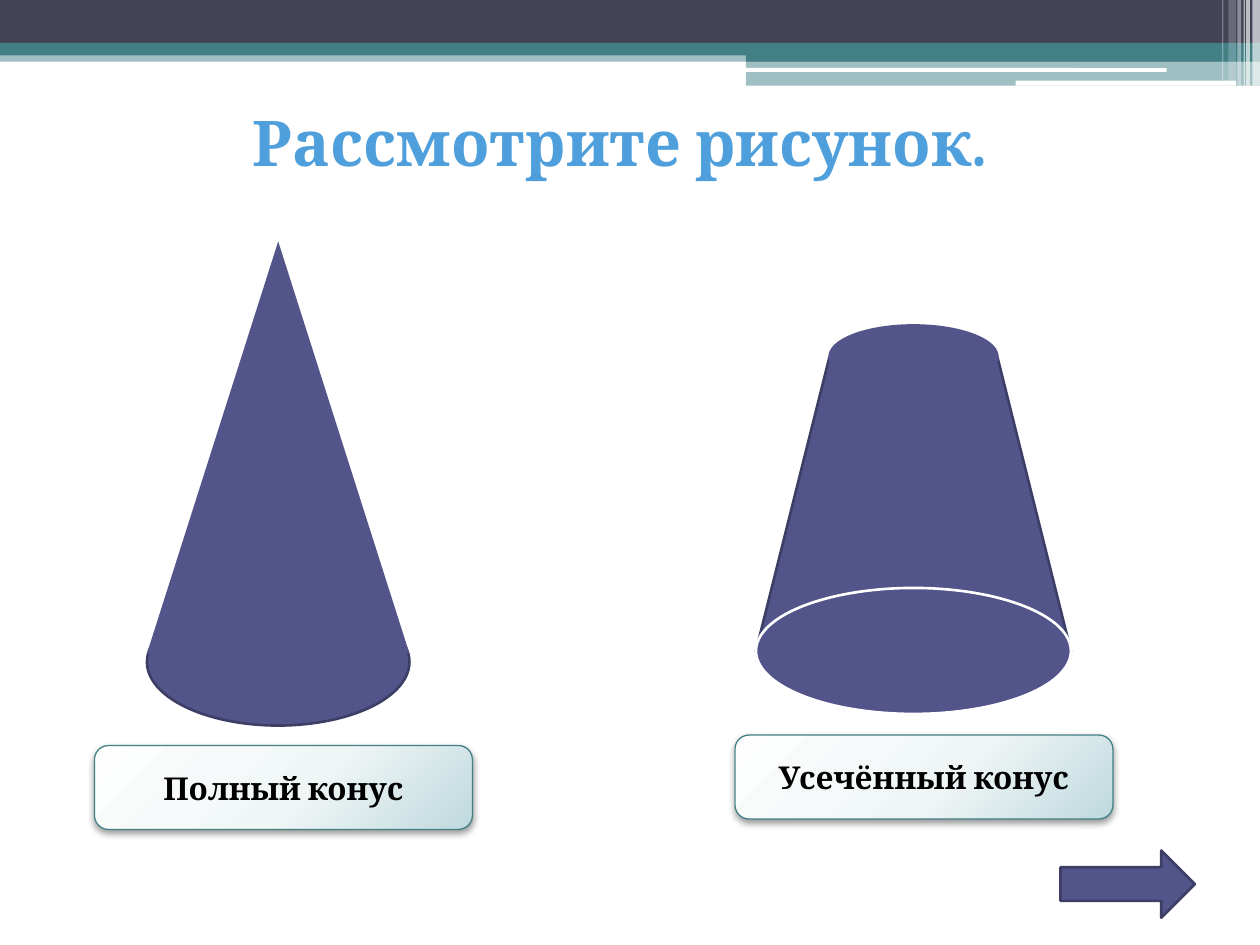
"""Builds a slide that compares a full cone with a truncated cone."""
from lxml import etree
from pptx import Presentation
from pptx import util as u
from pptx.dml.color import RGBColor
from pptx.enum import shapes, text
from pptx.oxml import parse_xml

COLORS = {
    "white": "FFFFFF", "slate": "424456", "teal": "438086", "violet": "53548A",
    "edge": "3D3E66", "title": "4E9FDB", "black": "000000",
}
HUNDREDTH = u.Inches(1) / 100
TWELFTH = u.Inches(1) / 12
DRAWING = "http://schemas.openxmlformats.org/drawingml/2006/main"
KINDS = shapes.MSO_SHAPE

GRADIENT = f"""<a:gradFill xmlns:a="{DRAWING}" rotWithShape="1"><a:gsLst>
<a:gs pos="0"><a:srgbClr val="FEFEFE"/></a:gs>
<a:gs pos="55000"><a:srgbClr val="F0F6F6"/></a:gs>
<a:gs pos="100000"><a:srgbClr val="BFD9DD"/></a:gs></a:gsLst>
<a:path path="circle"><a:fillToRect l="-40000" t="-90000" r="140000" b="190000"/></a:path>
</a:gradFill>"""
SHADOW = f"""<a:effectLst xmlns:a="{DRAWING}">
<a:outerShdw blurRad="{u.Pt(4.1)}" dist="{u.Pt(2)}" dir="5400000" rotWithShape="0">
<a:srgbClr val="000000"><a:alpha val="40000"/></a:srgbClr></a:outerShdw></a:effectLst>"""


def draw(parent, kind, cell, spot, fill, line=None, weight=1.5):
    box = parent.shapes.add_shape(kind, *(round(cell * part) for part in spot))
    box.shadow.inherit = False
    box.fill.solid()
    box.fill.fore_color.rgb = RGBColor.from_string(COLORS[fill])
    if line:
        box.line.color.rgb = RGBColor.from_string(COLORS[line])
        box.line.width = u.Pt(weight)
    else:
        box.line.fill.background()
    return box


def write(box, words, size, color):
    frame = box.text_frame
    for name, value in {"word_wrap": True, "vertical_anchor": text.MSO_ANCHOR.MIDDLE,
                        "auto_size": text.MSO_AUTO_SIZE.NONE}.items():
        setattr(frame, name, value)
    para = frame.paragraphs[0]
    para.alignment = text.PP_ALIGN.CENTER
    span = para.add_run()
    span.text = words
    for name, value in {"name": "Cambria", "size": u.Pt(size), "bold": True}.items():
        setattr(span.font, name, value)
    span.font.color.rgb = RGBColor.from_string(COLORS[color])


deck = Presentation()
deck.slide_width, deck.slide_height = u.Inches(10), u.Inches(7.5)
page = deck.slides.add_slide(deck.slide_layouts[5])

banner = [
    (KINDS.RECTANGLE, (0, 40, 1000, 9), "teal", 50),
    (KINDS.RECTANGLE, (0, 0, 1000, 34), "slate", 100),
    (KINDS.RECTANGLE, (0, 34, 1000, 10), "teal", 100),
    (KINDS.RECTANGLE, (592, 39, 408, 10), "teal", 100),
    (KINDS.RECTANGLE, (592, 48, 408, 20), "teal", 50),
    (KINDS.ROUNDED_RECTANGLE, (591, 54, 335, 3), "white", 100),
    (KINDS.ROUNDED_RECTANGLE, (806, 64, 175, 4), "white", 100),
]
stripes = [(994, 6, 68, 65), (989, 3, 68, 65), (987, 1, 68, 60),
           (982, 3, 68, 40), (975, 6, 64, 20), (970, 1, 64, 30)]
banner += [(KINDS.RECTANGLE, (left, 0, width, height), "white", opacity)
           for left, width, height, opacity in stripes]
for kind, spot, fill, opacity in banner:
    band = draw(page, kind, HUNDREDTH, spot, fill)
    if opacity < 100:
        tint = band.fill._xPr.find(f".//{{{DRAWING}}}srgbClr")
        etree.SubElement(tint, f"{{{DRAWING}}}alpha", val=str(opacity * 1000))

title = page.shapes.title
for name, value in {"left": 0, "top": 6 * TWELFTH,
                    "width": 118 * TWELFTH, "height": 15 * TWELFTH}.items():
    setattr(title, name, round(value))
write(title, "Рассмотрите рисунок.", 36, "title")
title.element.getparent().append(title.element)

draw(page, KINDS.RIGHT_ARROW, TWELFTH, (101, 81, 12.8, 6.4), "violet", "edge")

figures = [
    [(KINDS.OVAL, (14, 57, 25, 12.1), "edge"),
     (KINDS.FLOWCHART_EXTRACT, (14, 23, 25, 39.25), None)],
    [(KINDS.TRAPEZOID, (72, 34, 30, 28), "edge"),
     (KINDS.OVAL, (72, 56, 30, 12), "white"),
     (KINDS.OVAL, (79, 31, 16, 6), "violet")],
]
for parts in figures:
    cone = page.shapes.add_group_shape()
    for kind, spot, line in parts:
        draw(cone, kind, TWELFTH, spot, "violet", line)

for words, left, top in [("Полный конус", 9, 71), ("Усечённый конус", 70, 70)]:
    label = draw(page, KINDS.ROUNDED_RECTANGLE, TWELFTH, (left, top, 36, 8),
                 "white", "teal", 0.75)
    look = label.fill._xPr
    look.replace(look.find(f"{{{DRAWING}}}solidFill"), parse_xml(GRADIENT))
    look.replace(look.find(f"{{{DRAWING}}}effectLst"), parse_xml(SHADOW))
    write(label, words, 18, "black")

deck.save("out.pptx")
